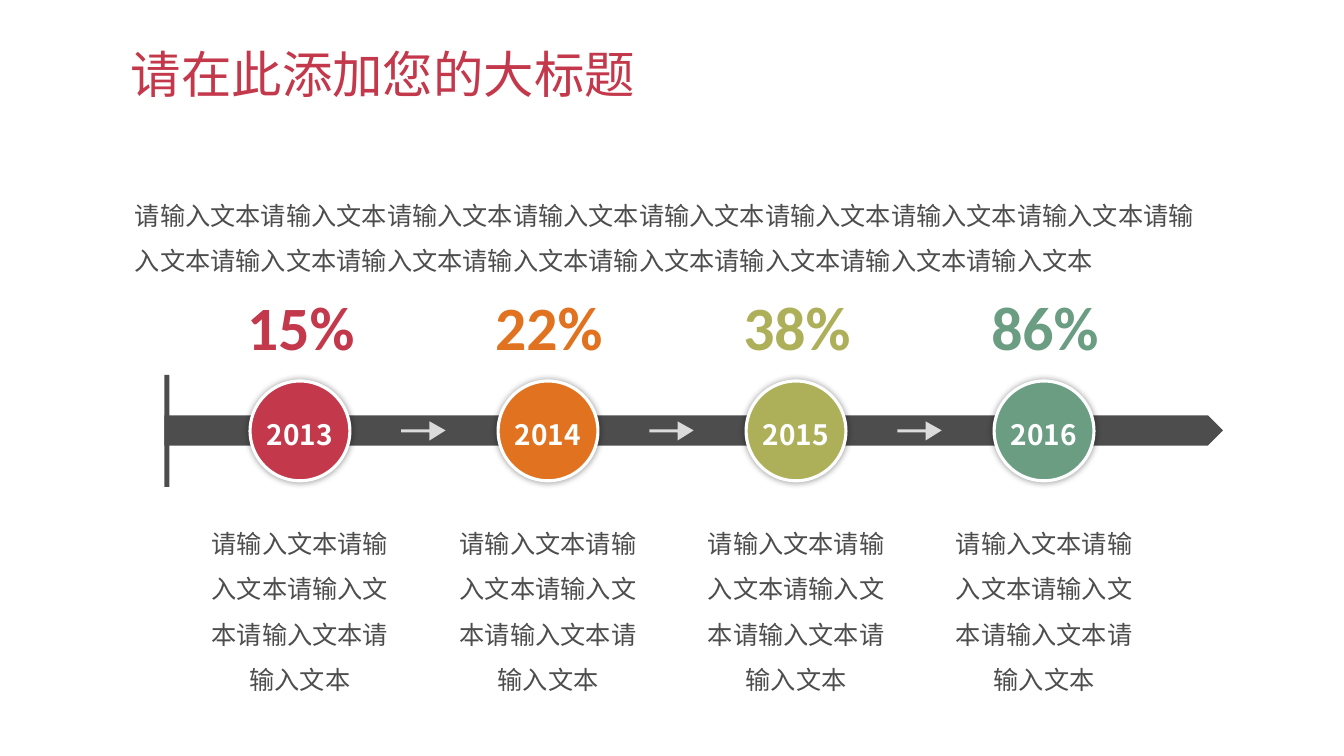
from lxml.etree import SubElement
from pptx import Presentation
from pptx.dml.color import RGBColor
from pptx.enum.shapes import MSO_SHAPE as Preset
from pptx.enum.text import MSO_ANCHOR as Anchor, PP_ALIGN as Align
from pptx.oxml.ns import qn
from pptx.util import Inches, Pt

CRIMSON = RGBColor(0xC4, 0x38, 0x4C)
ORANGE = RGBColor(0xE1, 0x72, 0x1F)
OLIVE = RGBColor(0xAD, 0xAF, 0x59)
GREEN = RGBColor(0x6B, 0x9D, 0x83)
DARK = RGBColor(0x4D, 0x4D, 0x4D)
PALE = RGBColor(0xDB, 0xDB, 0xDB)
WHITE = RGBColor(0xFE, 0xFF, 0xFF)

CJK_FONT = "Noto Sans CJK SC"
FILLER = "请输入文本"
MILESTONES = [
    ("2013", "15%", CRIMSON),
    ("2014", "22%", ORANGE),
    ("2015", "38%", OLIVE),
    ("2016", "86%", GREEN),
]
FIRST_CENTER = 2.98
STEP = 2.46
AXIS_LEFT = 1.63
AXIS_MIDDLE = 4.27
ARROW_OUTLINE = [(0, -0.01), (0.28, -0.01), (0.28, -0.09), (0.44, 0),
                 (0.28, 0.1), (0.28, 0.02), (0, 0.02)]


def write(shape, text, size, color, font=CJK_FONT, bold=False,
          align=Align.LEFT, spacing=1.0, anchor=Anchor.MIDDLE):
    frame = shape.text_frame
    frame.word_wrap = True
    frame.vertical_anchor = anchor
    frame.text = text
    para = frame.paragraphs[0]
    para.alignment = align
    para.line_spacing = spacing
    span = para.runs[0]
    span.font.size = Pt(size)
    span.font.bold = bold
    span.font.color.rgb = color
    span.font.name = font
    SubElement(span.font._element, qn("a:ea"), typeface=font)


def add_text(page, left, top, width, height, text, size, color, **style):
    box = page.shapes.add_textbox(Inches(left), Inches(top),
                                  Inches(width), Inches(height))
    write(box, text, size, color, **style)


def paint(shape, color):
    shape.shadow.inherit = False
    shape.fill.solid()
    shape.fill.fore_color.rgb = color
    shape.line.fill.background()


def add_filled(page, preset, left, top, width, height, color):
    shape = page.shapes.add_shape(preset, Inches(left), Inches(top),
                                  Inches(width), Inches(height))
    paint(shape, color)
    return shape


def add_glow(shape):
    effects = shape._element.spPr.find(qn("a:effectLst"))
    shadow = SubElement(effects, qn("a:outerShdw"), blurRad=str(Pt(5)),
                        dist="0", dir="0", algn="ctr", rotWithShape="0")
    black = SubElement(shadow, qn("a:srgbClr"), val="000000")
    SubElement(black, qn("a:alpha"), val="40000")


def add_year(page, center, year, color):
    circle = add_filled(page, Preset.OVAL, center - 0.5, 3.78, 0.99, 0.99, color)
    circle.line.color.rgb = WHITE
    circle.line.width = Pt(2.25)
    add_glow(circle)
    frame = circle.text_frame
    frame.margin_left = frame.margin_right = 0
    frame.margin_top = frame.margin_bottom = 0
    write(circle, year, 20, WHITE, bold=True, align=Align.CENTER, spacing=1.2)


def add_arrow(page, left):
    points = [(Inches(left + x), Inches(AXIS_MIDDLE + y))
              for x, y in ARROW_OUTLINE]
    builder = page.shapes.build_freeform(*points[0])
    builder.add_line_segments(points[1:], close=True)
    paint(builder.convert_to_shape(), PALE)


def add_milestone(page, center, year, percent, color):
    add_text(page, center - 0.76, 2.82, 1.53, 0.84, percent, 44, color,
             font="Calibri", bold=True, align=Align.CENTER, anchor=Anchor.TOP)
    add_year(page, center, year, color)
    add_text(page, center - 1, 5, 1.99, 1.98, FILLER * 5, 18, DARK,
             align=Align.CENTER, spacing=1.5)


def main():
    deck = Presentation()
    deck.slide_width = Inches(13.33)
    deck.slide_height = Inches(7.5)
    page = deck.slides.add_slide(deck.slide_layouts[6])

    add_text(page, 1.2, 0.3, 10.94, 0.93, "请在此添加您的大标题", 36, CRIMSON,
             spacing=0.9)
    add_text(page, 1.24, 1.62, 10.85, 1.33, FILLER * 16, 18, DARK, spacing=1.5)
    add_filled(page, Preset.PENTAGON, AXIS_LEFT, 4.12, 10.5, 0.3, DARK)
    add_filled(page, Preset.RECTANGLE, AXIS_LEFT, 3.72, 0.05, 1.11, DARK)

    for index, (year, percent, color) in enumerate(MILESTONES):
        center = FIRST_CENTER + index * STEP
        add_milestone(page, center, year, percent, color)
        if index < len(MILESTONES) - 1:
            add_arrow(page, center + 1)

    deck.save("out.pptx")


if __name__ == "__main__":
    main()
